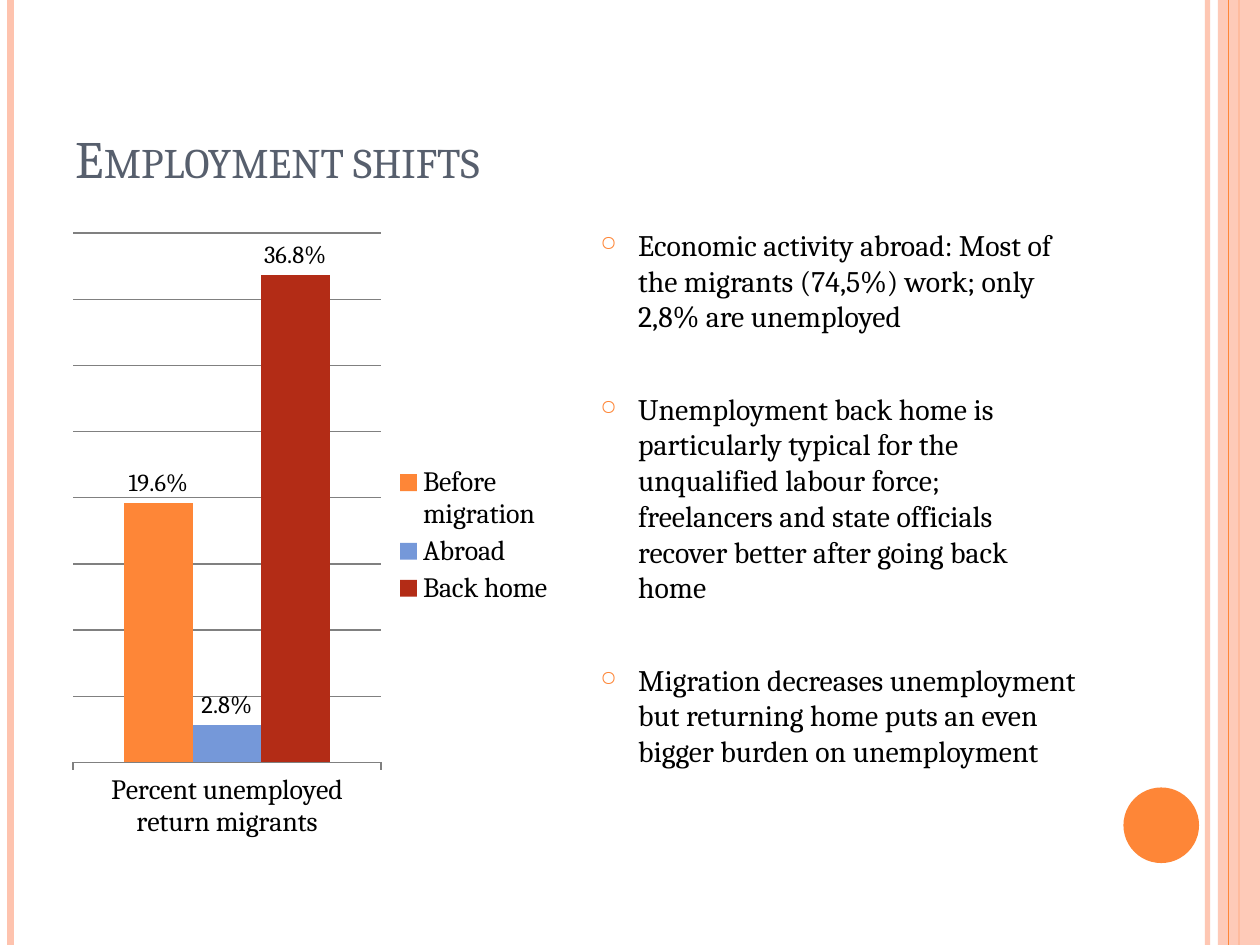
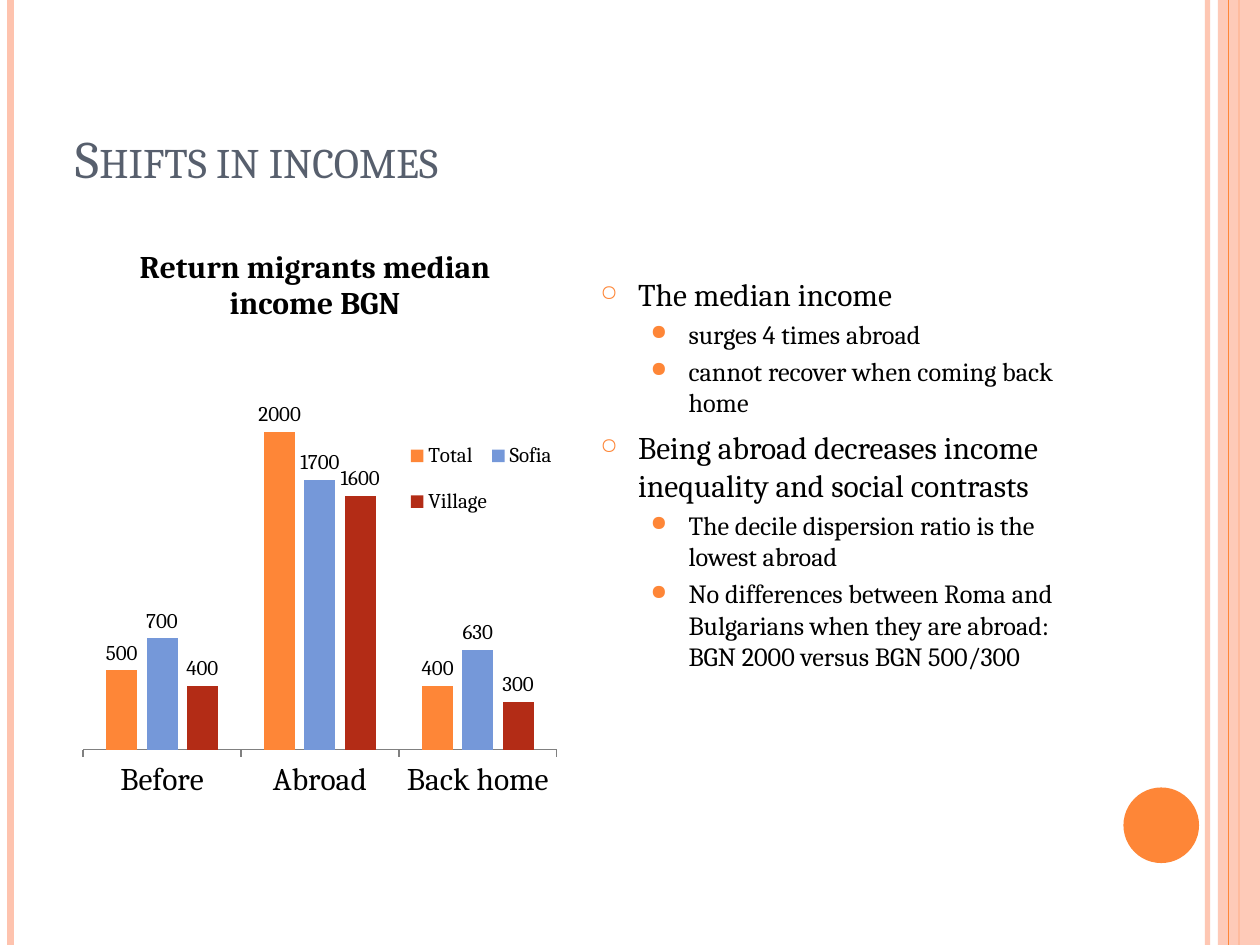
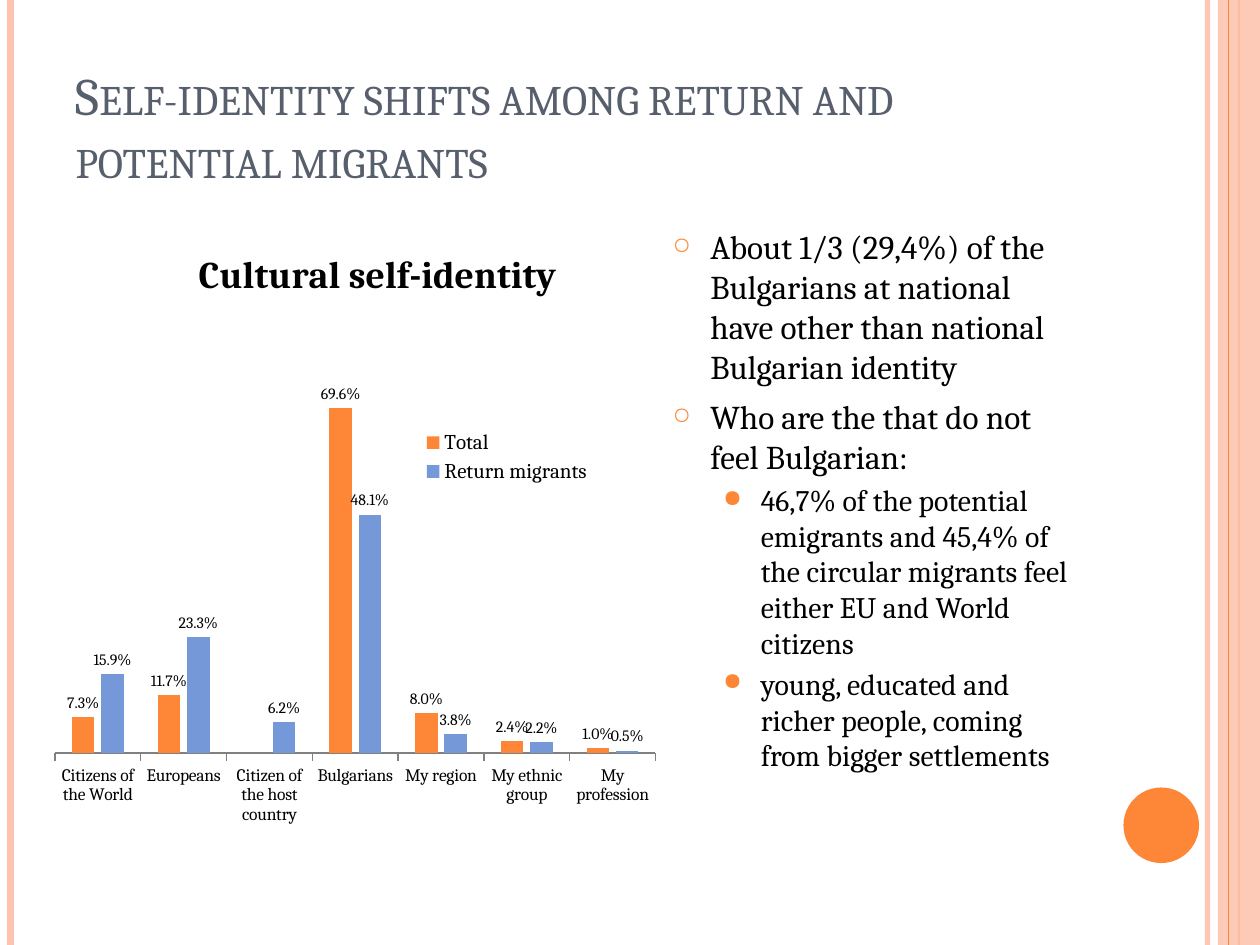
from lxml.etree import SubElement
from pptx import Presentation
from pptx.chart.data import CategoryChartData as ChartData
from pptx.dml.color import RGBColor
from pptx.enum.chart import XL_CHART_TYPE as CT, XL_LABEL_POSITION as LP
from pptx.enum.chart import XL_LEGEND_POSITION as LEG, XL_TICK_MARK as TM
from pptx.enum.shapes import MSO_CONNECTOR as CN, MSO_SHAPE as SH
from pptx.enum.text import MSO_ANCHOR as ANCHOR, MSO_AUTO_SIZE as AUTO, PP_ALIGN as AL
from pptx.oxml.ns import qn
from pptx.util import Pt

W, H = 720, 540
FONT = "Cambria"
ORANGE, PINK, BLUE, RED = "FE8637", "FEC3AE", "7598D9", "B32C16"
SLATE, BLACK, GREY = "575F6D", "000000", "808080"
LEVELS = [
    {"indent": 21.6, "before": 6, "char": "○", "scale": 70},
    {"indent": 50.4, "before": 3, "char": "●", "scale": 80},
]


def rgb(h):
    return RGBColor.from_string(h)


def assign(obj, values):
    for name, value in values.items():
        setattr(obj, name, value)


def child(parent, tag, **attrs):
    return SubElement(parent, qn(tag), attrs)


def set_alpha(fill_parent, percent):
    clr = next(fill_parent.iter(qn("a:srgbClr")))
    child(clr, "a:alpha", val=str(percent * 1000))


def set_layout(parent, index, box, inner=False):
    for old in parent.findall(qn("c:layout")):
        parent.remove(old)
    layout = child(parent, "c:layout")
    manual = child(layout, "c:manualLayout")
    if inner:
        child(manual, "c:layoutTarget", val="inner")
    for axis in "xy":
        child(manual, f"c:{axis}Mode", val="edge")
    for name, value in zip("xywh", box):
        child(manual, f"c:{name}", val=str(value))
    parent.insert(index, layout)


class Deck:
    def __init__(self):
        self.prs = Presentation()
        assign(self.prs, {"slide_width": Pt(W), "slide_height": Pt(H)})
        self.s = None

    def slide(self, title):
        self.s = self.prs.slides.add_slide(self.prs.slide_layouts[5])
        self.vline(690, PINK, 3, 93)
        self.vline(6, PINK, 4.5)
        self.vline(708, ORANGE, 1.5)
        self.shape(SH.RECTANGLE, (696, 0, 24, H), PINK, 87)
        self.vline(702, ORANGE, 0.75)
        self.shape(SH.OVAL, (642, 450, 43.2, 43.2), ORANGE)
        self.title(title)

    def vline(self, x, color, width, alpha=100):
        ln = self.s.shapes.add_connector(CN.STRAIGHT, Pt(x), 0, Pt(x), Pt(H))
        ln.line.color.rgb = rgb(color)
        ln.line.width = Pt(width)
        spPr = ln._element.spPr
        if alpha < 100:
            set_alpha(spPr, alpha)
        child(spPr, "a:effectLst")

    def shape(self, kind, box, color, alpha=100):
        sp = self.s.shapes.add_shape(kind, *map(Pt, box))
        sp.shadow.inherit = False
        sp.fill.solid()
        sp.fill.fore_color.rgb = rgb(color)
        sp.line.fill.background()
        if alpha < 100:
            set_alpha(sp._element.spPr, alpha)

    def font(self, font, size, color=BLACK, bold=False):
        assign(font, {"name": FONT, "size": Pt(size), "bold": bold})
        font.color.rgb = rgb(color)

    def title(self, text):
        sp = self.s.shapes.title
        assign(sp, {"left": Pt(36), "top": Pt(21.6), "width": Pt(588), "height": Pt(90)})
        tf = sp.text_frame
        assign(tf, {"text": text, "word_wrap": True, "auto_size": AUTO.NONE,
                    "vertical_anchor": ANCHOR.BOTTOM})
        p = tf.paragraphs[0]
        p.alignment = AL.LEFT
        r = p.runs[0]
        self.font(r.font, 30, SLATE)
        r.font._element.set("cap", "small")

    def bullets(self, box, sizes, items, gap=0):
        tf = self.s.shapes.add_textbox(*map(Pt, box)).text_frame
        assign(tf, {"word_wrap": True, "auto_size": AUTO.NONE})
        for i, (level, text) in enumerate(items):
            p = tf.add_paragraph() if i else tf.paragraphs[0]
            style = LEVELS[level]
            assign(p, {"level": level, "alignment": AL.LEFT,
                       "space_before": Pt(style["before"] + gap if i else 0)})
            r = p.add_run()
            r.text = text
            self.font(r.font, sizes[level])
            pPr = p._p.get_or_add_pPr()
            pPr.set("marL", str(Pt(style["indent"])))
            pPr.set("indent", str(-Pt(21.6)))
            child(child(pPr, "a:buClr"), "a:srgbClr", val=ORANGE)
            child(pPr, "a:buSzPct", val=str(style["scale"] * 1000))
            child(pPr, "a:buChar", char=style["char"])

    def chart(self, box, cats, series, number_format, sizes, title=None,
              title_size=18, grid=False, overlap=0, plot_box=None, legend_box=None):
        axis_size, legend_size, label_size = sizes
        data = ChartData(number_format=number_format)
        data.categories = cats
        for name, values in series:
            data.add_series(name, values)
        ch = self.s.shapes.add_chart(CT.COLUMN_CLUSTERED, *map(Pt, box), data).chart
        self.font(ch.font, 18)
        ch.has_title = title is not None
        if title:
            tf = ch.chart_title.text_frame
            tf.text = title
            self.font(tf.paragraphs[0].runs[0].font, title_size, bold=True)

        cat, val = ch.category_axis, ch.value_axis
        assign(cat, {"major_tick_mark": TM.OUTSIDE, "has_major_gridlines": False})
        cat.format.line.color.rgb = rgb(GREY)
        self.font(cat.tick_labels.font, axis_size)
        assign(val, {"visible": False, "has_major_gridlines": grid, "minimum_scale": 0})
        if grid:
            val.major_gridlines.format.line.color.rgb = rgb(GREY)

        plot = ch.plots[0]
        assign(plot, {"gap_width": 150, "overlap": overlap,
                      "vary_by_categories": False, "has_data_labels": True})
        labels = plot.data_labels
        assign(labels, {"show_value": True, "number_format": number_format,
                        "number_format_is_linked": False, "position": LP.OUTSIDE_END})
        self.font(labels.font, label_size)
        for ser, color in zip(plot.series, (ORANGE, BLUE, RED)):
            ser.format.fill.solid()
            ser.format.fill.fore_color.rgb = rgb(color)

        ch.has_legend = True
        assign(ch.legend, {"position": LEG.RIGHT, "include_in_layout": False})
        self.font(ch.legend.font, legend_size)
        if plot_box:
            set_layout(next(ch.element.iter(qn("c:plotArea"))), 0, plot_box, True)
        if legend_box:
            set_layout(next(ch.element.iter(qn("c:legend"))), 1, legend_box)


def main():
    d = Deck()

    d.slide("Employment shifts")
    d.chart((36, 126, 288, 360), ["Percent unemployed return migrants"],
            [("Before migration", [0.196]), ("Abroad", [0.028]), ("Back home", [0.368])],
            "0.0%", (16, 16, 14), grid=True)
    d.bullets((336, 126, 288, 360), (17, 15), [
        (0, "Economic activity abroad: Most of the migrants (74,5%) work; only 2,8% are unemployed"),
        (0, "Unemployment back home is particularly typical for the unqualified labour force; "
            "freelancers and state officials recover better after going back home"),
        (0, "Migration decreases unemployment but returning home puts an even bigger burden "
            "on unemployment"),
    ], gap=26.4)

    d.slide("Shifts in incomes")
    d.chart((36, 126, 288, 360), ["Before", "Abroad", "Back home"],
            [("Total", [500, 2000, 400]), ("Sofia", [700, 1700, 630]),
             ("Village", [400, 1600, 300])],
            "General", (18, 12, 12), title="Return migrants median income BGN", overlap=-30,
            plot_box=(0.04, 0.21, 0.94, 0.63), legend_box=(0.68, 0.32, 0.3, 0.18))
    d.bullets((336, 153.6, 288, 332.4), (18, 15), [
        (0, "The median income"),
        (1, "surges 4 times abroad"),
        (1, "cannot recover when coming back home"),
        (0, "Being abroad decreases income inequality and social contrasts"),
        (1, "The decile dispersion ratio is the lowest abroad"),
        (1, "No differences between Roma and Bulgarians when they are abroad: "
            "BGN 2000 versus BGN 500/300"),
    ])

    d.slide("Self-identity shifts among return and potential migrants")
    d.chart((31, 128, 369.4, 360),
            ["Citizens of the World", "Europeans", "Citizen of the host country",
             "Bulgarians", "My region", "My ethnic group", "My profession"],
            [("Total", [0.073, 0.117, None, 0.696, 0.08, 0.024, 0.01]),
             ("Return migrants", [0.159, 0.233, 0.062, 0.481, 0.038, 0.022, 0.005])],
            "0.0%", (10, 12, 9), title="Cultural self-identity", title_size=21.6,
            overlap=-30, plot_box=(0, 0.21, 0.93, 0.63), legend_box=(0.56, 0.32, 0.28, 0.1))
    d.bullets((377.3, 126, 247, 360), (19, 17), [
        (0, "About 1/3 (29,4%) of the Bulgarians at national have other than national "
            "Bulgarian identity"),
        (0, "Who are the that do not feel Bulgarian:"),
        (1, "46,7% of the potential emigrants and 45,4% of the circular migrants feel "
            "either EU and World citizens"),
        (1, "young, educated and richer people, coming from bigger settlements"),
    ])

    d.prs.save("out.pptx")


if __name__ == "__main__":
    main()
